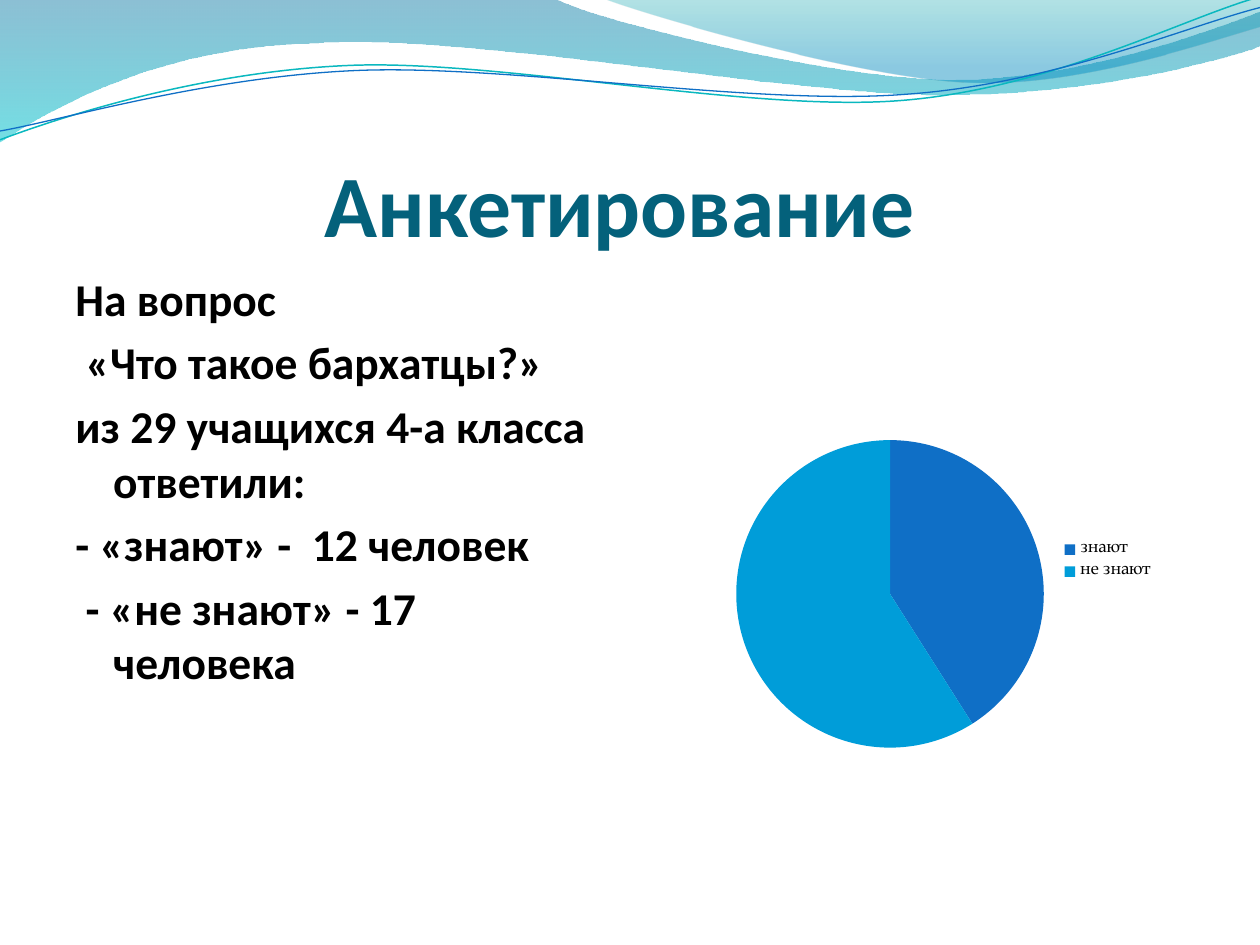
from lxml import etree
from pptx import Presentation
from pptx.chart.data import CategoryChartData
from pptx.dml.color import RGBColor
from pptx.enum.chart import XL_CHART_TYPE, XL_LEGEND_POSITION
from pptx.enum.text import MSO_ANCHOR, PP_ALIGN
from pptx.oxml import parse_xml
from pptx.oxml.ns import nsdecls, qn
from pptx.util import Inches, Pt

PIE = XL_CHART_TYPE.PIE
RIGHT = XL_LEGEND_POSITION.RIGHT
TOP, BOTTOM = MSO_ANCHOR.TOP, MSO_ANCHOR.BOTTOM
LEFT, CENTER = PP_ALIGN.LEFT, PP_ALIGN.CENTER

WIDTH, HEIGHT = 10, 7.5
UNITS_PER_INCH = 10000
HANGING = 0.3

COLORS = {
    "title": "04617B", "text": "000000",
    "deep": "0074A1", "cyan": "00C6CF", "teal": "00A1A9", "sky": "008BBF",
    "teal_line": "0AB8BF", "blue": "0F6FC6", "light_blue": "009DD9",
}
TITLE_FORMAT = {"name": "Calibri", "size": Pt(50), "bold": True}
BODY_FORMAT = {"name": "Calibri", "size": Pt(26), "bold": True}
CHART_FORMAT = {"name": "TeX Gyre Pagella", "size": Pt(10), "bold": False}
TITLE_MARGINS = {"margin_left": 0, "margin_right": 0, "margin_bottom": 0}

# Outlines in inches: a pair is a corner, six numbers are a Bezier segment
WAVES = [
    ([(0, 0), (4.4, -0.01), (4.76, 0.17, 6.64, 0.63, 7.58, 0.63),
      (8.53, 0.63, 9.58, 0.26, 10, 0.09), (10.01, 0.36),
      (9.83, 0.44, 8.7, 0.76, 7.46, 0.75), (6.22, 0.75, 3.82, 0.28, 2.57, 0.34),
      (1.29, 0.36, 0.46, 0.83, -0.01, 1.13), (0, 0)],
     [(0, "deep", 45), (1, "cyan", 55)]),
    ([(4.79, -0.01), (5.09, 0.11, 6.82, 0.62, 7.69, 0.65),
      (8.56, 0.69, 9.61, 0.32, 10, 0.21), (10, 0), (4.79, -0.01)],
     [(0, "teal", 30), (0.8, "sky", 45)]),
]
RIBBONS = [
    ([(0, 1.11), (0.48, 0.93, 1.58, 0.57, 2.77, 0.52),
      (3.95, 0.47, 5.93, 0.89, 7.13, 0.8), (8.33, 0.71, 9.38, 0.15, 9.98, -0.02)],
     "teal_line", 0.85),
    ([(0, 1.04), (0.47, 0.96, 1.64, 0.61, 2.83, 0.56),
      (4.03, 0.51, 5.97, 0.84, 7.17, 0.75), (8.36, 0.67, 9.41, 0.21, 10, 0.06)],
     "blue", 0.75),
]
BODY_LINES = [
    "На вопрос",
    " «Что такое бархатцы?»",
    "из 29 учащихся 4-а класса ответили:",
    "- «знают» -  12 человек",
    " - «не знают» - 17 человека",
]
ANSWERS = {"знают": (41, "blue"), "не знают ": (59, "light_blue")}


def color(name):
    return RGBColor.from_string(COLORS[name])


def area(left, top, width, height):
    """Turn percentages of the slide into lengths."""
    return (Inches(left * WIDTH / 100), Inches(top * HEIGHT / 100),
            Inches(width * WIDTH / 100), Inches(height * HEIGHT / 100))


def set_all(target, values):
    for name, value in values.items():
        setattr(target, name, value)


def apply_format(font, values, color_name):
    set_all(font, values)
    font.color.rgb = color(color_name)


def add_outline(page, outline, close):
    """Build the outline on its corners, then bend the Bezier segments."""
    corners = [tuple(round(value * UNITS_PER_INCH) for value in part[-2:])
               for part in outline]
    builder = page.shapes.build_freeform(*corners[0], scale=Inches(1) / UNITS_PER_INCH)
    builder.add_line_segments(corners[1:], close=close)
    shape = builder.convert_to_shape()
    shape.shadow.inherit = False
    origin = [min(axis) for axis in zip(*corners)]
    segments = list(shape._element.iter(qn("a:lnTo")))
    for segment, part in zip(segments, outline[1:]):
        if len(part) == 2:
            continue
        segment.tag = qn("a:cubicBezTo")
        for child in list(segment):
            segment.remove(child)
        for x, y in zip(part[0::2], part[1::2]):
            point = etree.SubElement(segment, qn("a:pt"))
            point.set("x", str(round(x * UNITS_PER_INCH) - origin[0]))
            point.set("y", str(round(y * UNITS_PER_INCH) - origin[1]))
    return shape


def add_wave(page, outline, stops):
    wave = add_outline(page, outline, True)
    wave.line.fill.background()
    wave.fill.gradient()
    wave.fill.gradient_angle = 270
    for stop, (position, name, _) in zip(wave.fill.gradient_stops, stops):
        stop.position = position
        stop.color.rgb = color(name)
    tints = wave._element.spPr.findall(".//" + qn("a:gs") + "/" + qn("a:srgbClr"))
    for tint, (_, _, opacity) in zip(tints, stops):
        etree.SubElement(tint, qn("a:alpha")).set("val", str(opacity * 1000))


def add_ribbon(page, outline, name, weight):
    ribbon = add_outline(page, outline, False)
    ribbon.fill.background()
    ribbon.line.color.rgb = color(name)
    ribbon.line.width = Pt(weight)


def add_text(page, place, anchor, align, lines, values, color_name,
             hanging=0, margins=None):
    box = page.shapes.add_textbox(*area(*place))
    frame = box.text_frame
    frame.word_wrap = True
    frame.vertical_anchor = anchor
    set_all(frame, margins or {})
    for index, line in enumerate(lines):
        para = frame.paragraphs[0] if index == 0 else frame.add_paragraph()
        para.alignment = align
        if index:
            para.space_before = Pt(5.2)
        if hanging:
            props = para._p.get_or_add_pPr()
            props.set("marL", str(Inches(hanging)))
            props.set("indent", str(-Inches(hanging)))
        span = para.add_run()
        span.text = line
        apply_format(span.font, values, color_name)


def add_pie(page, place, answers, plot_share):
    data = CategoryChartData()
    data.categories = list(answers)
    data.add_series("Series 1", [value for value, _ in answers.values()])
    chart = page.shapes.add_chart(PIE, *area(*place), data).chart
    apply_format(chart.font, CHART_FORMAT, "text")
    chart.has_title = False
    chart.has_legend = True
    chart.legend.position = RIGHT
    chart.legend.include_in_layout = False
    plot = chart.plots[0]
    plot.vary_by_categories = True
    for index, (_, name) in enumerate(answers.values()):
        fill = plot.series[0].points[index].format.fill
        fill.solid()
        fill.fore_color.rgb = color(name)
    # Fixed place of the pie inside the chart
    sides = "".join(f'<c:{tag} val="{share}"/>' for tag, share in zip("xywh", plot_share))
    layout = parse_xml(
        f'<c:layout {nsdecls("c")}><c:manualLayout><c:layoutTarget val="inner"/>'
        f'<c:xMode val="edge"/><c:yMode val="edge"/>{sides}</c:manualLayout></c:layout>')
    plot_area = chart._chartSpace.chart.plotArea
    for old in plot_area.findall(qn("c:layout")):
        plot_area.remove(old)
    plot_area.insert(0, layout)


def main():
    deck = Presentation()
    deck.slide_width, deck.slide_height = Inches(WIDTH), Inches(HEIGHT)
    page = deck.slides.add_slide(deck.slide_layouts[6])

    # Waves along the top edge
    for outline, stops in WAVES:
        add_wave(page, outline, stops)
    for outline, name, weight in RIBBONS:
        add_ribbon(page, outline, name, weight)

    # Title and survey answers
    add_text(page, (5, 10.27, 90, 16.67), BOTTOM, CENTER, ["Анкетирование "],
             TITLE_FORMAT, "title", margins=TITLE_MARGINS)
    add_text(page, (5, 28, 44.2, 64.67), TOP, LEFT,
             BODY_LINES, BODY_FORMAT, "text", hanging=HANGING)

    # Shares of the answers
    add_pie(page, (57, 32.27, 35.9, 54.13), ANSWERS, (0.04, 0.26, 0.68, 0.61))
    deck.save("out.pptx")


if __name__ == "__main__":
    main()
